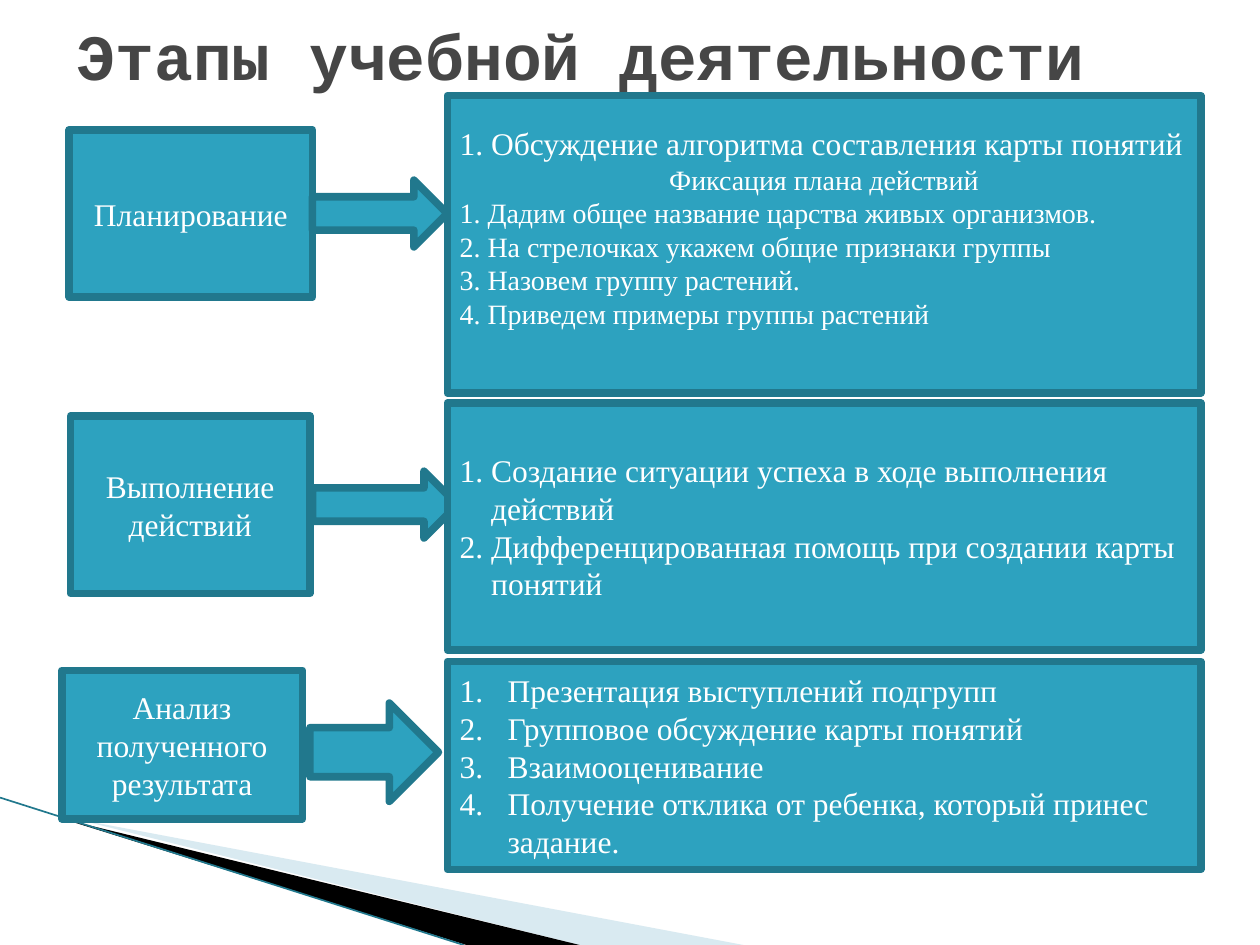
from dataclasses import dataclass

from lxml import etree
from pptx import Presentation
from pptx.dml.color import RGBColor
from pptx.enum.shapes import MSO_CONNECTOR, MSO_SHAPE
from pptx.enum.text import MSO_ANCHOR, MSO_AUTO_SIZE, PP_ALIGN
from pptx.oxml.ns import qn
from pptx.util import Inches, Pt

RECT, ARROW = MSO_SHAPE.RECTANGLE, MSO_SHAPE.RIGHT_ARROW
LINE = MSO_CONNECTOR.STRAIGHT
MIDDLE = MSO_ANCHOR.MIDDLE
LEFT, CENTER = PP_ALIGN.LEFT, PP_ALIGN.CENTER
NO_FIT = MSO_AUTO_SIZE.NONE
CELL = Inches(0.1)  # the slide is a grid of 100 columns by 75 rows


@dataclass(frozen=True)
class Theme:
    fill: str = "2DA2BF"
    edge: str = "21788D"
    text: str = "FFFFFF"
    head: str = "464646"
    pale: str = "A0CBDC"
    dark: str = "000000"
    head_font: str = "Courier New"
    body_font: str = "Times New Roman"
    head_size: float = 36.9
    body_size: float = 18
    note_size: float = 16
    border: float = 4.33
    hair: float = 0.95


def rgb(code):
    return RGBColor.from_string(code)


def cells(*counts):
    return [round(count * CELL) for count in counts]


def number(para, indent):
    """Turn a paragraph into an item of an automatic numbered list."""
    props = para._p.get_or_add_pPr()
    props.set("marL", str(Inches(indent)))
    props.set("indent", str(-Inches(indent)))
    etree.SubElement(props, qn("a:buAutoNum"), type="arabicPeriod")


class Deck:
    def __init__(self, theme):
        self.theme = theme
        self.file = Presentation()
        self.file.slide_width, self.file.slide_height = cells(100, 75)
        self.slide = self.file.slides.add_slide(self.file.slide_layouts[5])
        self.shapes = self.slide.shapes

    def style(self, font, name, size, color, bold=False):
        font.name, font.size, font.bold = name, Pt(size), bold
        font.color.rgb = rgb(color)

    def title(self, text, place):
        shape = self.shapes.title
        shape.left, shape.top, shape.width, shape.height = cells(*place)
        frame = shape.text_frame
        frame.text = text
        frame.auto_size, frame.vertical_anchor = NO_FIT, MIDDLE
        para = frame.paragraphs[0]
        para.alignment = LEFT
        look = self.theme
        self.style(para.runs[0].font, look.head_font, look.head_size,
                   look.head, True)

    def wedge(self, points, color, alpha=None):
        start, *rest = points
        pen = self.shapes.build_freeform(*start, scale=CELL)
        pen.add_line_segments(rest)
        shape = pen.convert_to_shape()
        shape.shadow.inherit = False
        shape.fill.solid()
        shape.fill.fore_color.rgb = rgb(color)
        shape.line.fill.background()
        if alpha:
            tone = shape._element.spPr.find(".//" + qn("a:srgbClr"))
            etree.SubElement(tone, qn("a:alpha"), val=str(alpha * 1000))

    def rule(self, start, end):
        line = self.shapes.add_connector(LINE, *cells(*start, *end))
        line.line.color.rgb = rgb(self.theme.edge)
        line.line.width = Pt(self.theme.hair)
        etree.SubElement(line._element.spPr, qn("a:effectLst"))

    def block(self, kind, place):
        shape = self.shapes.add_shape(kind, *cells(*place))
        shape.shadow.inherit = False
        shape.fill.solid()
        shape.fill.fore_color.rgb = rgb(self.theme.fill)
        shape.line.color.rgb = rgb(self.theme.edge)
        shape.line.width = Pt(self.theme.border)
        return shape

    def box(self, place, lines, indent=0, notes=(), foot=0.5):
        """Draw a box: numbered lines if indented, else centred; then notes.

        The first note is a centred heading; foot is the bottom margin."""
        look = self.theme
        frame = self.block(RECT, place).text_frame
        frame.word_wrap, frame.vertical_anchor = True, MIDDLE
        frame.margin_bottom = cells(foot)[0]
        frame.text = "\n".join([*lines, *notes])
        for pos, para in enumerate(frame.paragraphs):
            main = pos < len(lines)
            para.alignment = LEFT
            if main and indent:
                number(para, indent)
            elif main or pos == len(lines):
                para.alignment = CENTER
            self.style(para.runs[0].font, look.body_font,
                       look.body_size if main else look.note_size, look.text)


STEPS = [
    ("Планирование", (5.5, 10.3, 19.3, 13.3), (24.8, 14.3, 10.7, 5.3)),
    ("Выполнение действий", (5.6, 33, 19, 14.1), (24.8, 37.4, 11.5, 5.3)),
    ("Анализ полученного результата", (4.9, 53.2, 19.1, 11.8),
     (24.6, 55.8, 10.2, 7.8)),
]
DETAILS = [
    dict(top=7.6, high=23.6, indent=0.25, foot=3.2,
         lines=["Обсуждение алгоритма составления карты понятий"],
         notes=["Фиксация плана действий",
                "1. Дадим общее название царства живых организмов.",
                "2. На стрелочках укажем общие признаки группы",
                "3. Назовем группу растений.",
                "4. Приведем примеры группы растений"]),
    dict(top=32, high=19.6, indent=0.25,
         lines=["Создание ситуации успеха в ходе выполнения действий",
                "Дифференцированная помощь при создании карты понятий"]),
    dict(top=52.5, high=16.5, indent=0.38,
         lines=["Презентация выступлений подгрупп",
                "Групповое обсуждение карты понятий",
                "Взаимооценивание",
                "Получение отклика от ребенка, который принес задание."]),
]


def main():
    theme = Theme()
    deck = Deck(theme)
    deck.wedge([(5.5, 65), (59.2, 75), (45.6, 75)], theme.pale, 40)
    deck.wedge([(5.3, 64.9), (45.5, 75), (37, 75)], theme.dark)
    deck.rule((0, 63.3), (36.8, 75))
    deck.title("Этапы учебной деятельности", (5.1, 1.3, 90, 6.1))
    for (name, place, arrow), detail in zip(STEPS, DETAILS):
        deck.box(place, [name])
        deck.block(ARROW, arrow)
        top, high, *_ = detail.values()
        rest = {key: detail[key] for key in detail if key not in ("top", "high")}
        deck.box((35.5, top, 59.8, high), **rest)
    deck.file.save("out.pptx")


if __name__ == "__main__":
    main()
